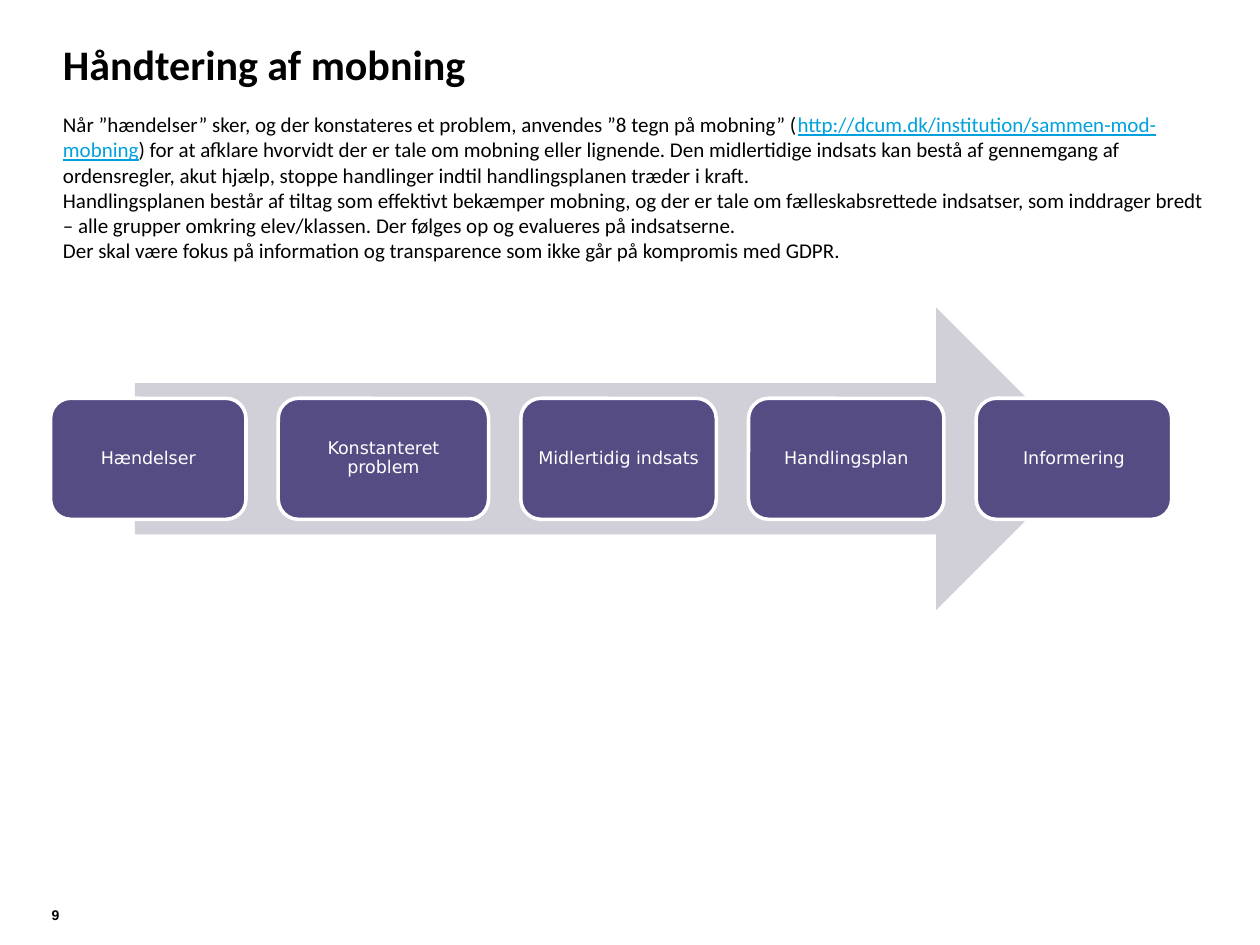
from pptx import Presentation
from pptx.dml.color import RGBColor
from pptx.enum.shapes import MSO_SHAPE
from pptx.enum.text import MSO_ANCHOR, PP_ALIGN
from pptx.util import Cm, Pt

ARROW, ROUND = MSO_SHAPE.RIGHT_ARROW, MSO_SHAPE.ROUNDED_RECTANGLE
TOP, MIDDLE = MSO_ANCHOR.TOP, MSO_ANCHOR.MIDDLE
LEFT, CENTER = PP_ALIGN.LEFT, PP_ALIGN.CENTER

# Each paragraph is a list of (style, text) runs.
INTRO = [
    [("title", "Håndtering af mobning")],
    [("body", "Når ”hændelser” sker, og der konstateres et problem, "
              "anvendes ”8 tegn på mobning” ("),
     ("link", "http://dcum.dk/institution/sammen-mod-mobning"),
     ("body", ") for at afklare hvorvidt der er tale om mobning eller lignende. "
              "Den midlertidige indsats kan bestå af gennemgang af ordensregler, "
              "akut hjælp, stoppe handlinger indtil handlingsplanen træder i kraft.")],
    [("body", "Handlingsplanen består af tiltag som effektivt bekæmper mobning, "
              "og der er tale om fælleskabsrettede indsatser, som inddrager bredt "
              "– alle grupper omkring elev/klassen. "
              "Der følges op og evalueres på indsatserne.")],
    [("body", "Der skal være fokus på information og transparence "
              "som ikke går på kompromis med GDPR.")],
]
# Step label and box width in cm
STEPS = [
    ("Hændelser", 3.94),
    ("Konstanteret problem", 4.24),
    ("Midlertidig indsats", 3.94),
    ("Handlingsplan", 3.94),
    ("Informering", 3.94),
]
PAGE = "9"

THEME = {
    "arrow": "D1D0D9",
    "step": "564C84",
    "edge": "FFFFFF",
    "fonts": {
        "title": dict(name="Calibri", size=Pt(24), bold=True, color="000000"),
        "body": dict(name="Calibri", size=Pt(12), bold=False, color="000000"),
        "link": dict(name="Calibri", size=Pt(12), bold=False, underline=True,
                     color="00A1DD"),
        "label": dict(name="DejaVu Sans", size=Pt(10), color="FFFFFF"),
        "page": dict(name="Arial", size=Pt(8), bold=True, color="000000"),
    },
}


def apply(target, values):
    for name, value in values.items():
        if name == "color":
            target.color.rgb = RGBColor.from_string(value)
        else:
            setattr(target, name, value)


def write(shape, paras, insets, anchor=TOP, **layout):
    """Fill a shape with styled runs; insets are left/right and top/bottom in cm."""
    side, end = map(Cm, insets)
    frame = shape.text_frame
    apply(frame, dict(word_wrap=True, vertical_anchor=anchor,
                      margin_left=side, margin_right=side,
                      margin_top=end, margin_bottom=end))
    for i, runs in enumerate(paras):
        para = frame.add_paragraph() if i else frame.paragraphs[0]
        apply(para, layout)
        for style, text in runs:
            run = para.add_run()
            run.text = text
            apply(run.font, THEME["fonts"][style])


def draw(slide, kind, place, fill, edge=None):
    shape = slide.shapes.add_shape(kind, *map(Cm, place))
    shape.shadow.inherit = False
    shape.fill.solid()
    shape.fill.fore_color.rgb = RGBColor.from_string(fill)
    if edge:
        shape.line.color.rgb = RGBColor.from_string(edge)
        shape.line.width = Pt(2)
    else:
        shape.line.fill.background()
    return shape


def main():
    deck = Presentation()
    deck.slide_width, deck.slide_height = Cm(25.4), Cm(19.05)
    slide = deck.slides.add_slide(deck.slide_layouts[6])

    intro = slide.shapes.add_textbox(Cm(1.02), Cm(0.78), Cm(23.55), Cm(4.9))
    write(intro, INTRO, (0.25, 0), alignment=LEFT)
    intro.text_frame.paragraphs[0].space_after = Pt(13)

    page = slide.shapes.add_textbox(Cm(1.04), Cm(18.14), Cm(1.22), Cm(0.64))
    write(page, [[("page", PAGE)]], (0, 0.13))

    draw(slide, ARROW, (2.72, 6.2, 19.2, 6.1), THEME["arrow"])
    left, gap, high = 1.02, 0.65, 2.44
    top = 6.2 + (6.1 - high) / 2
    for label, width in STEPS:
        step = draw(slide, ROUND, (left, top, width, high),
                    THEME["step"], THEME["edge"])
        write(step, [[("label", label)]], (0.1, 0.1), MIDDLE,
              alignment=CENTER, line_spacing=0.9)
        left += width + gap

    deck.save("out.pptx")


if __name__ == "__main__":
    main()
